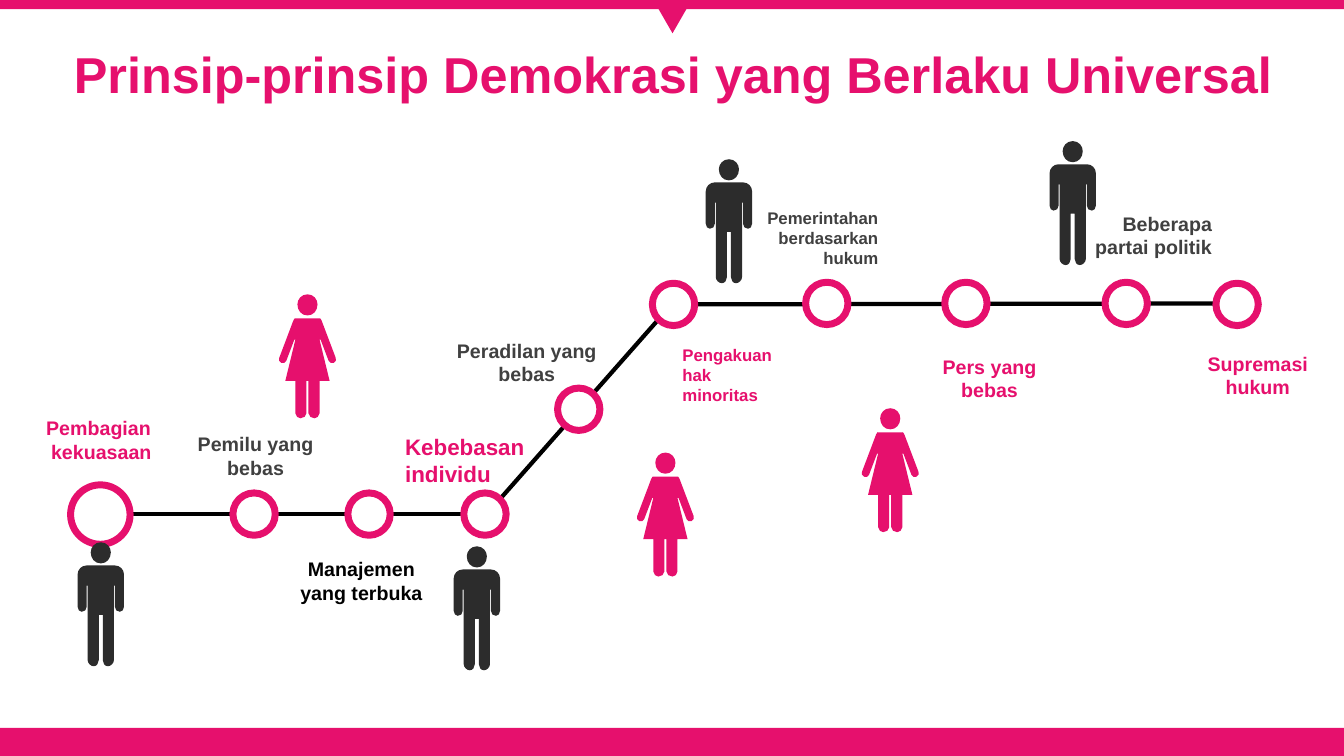
from lxml import etree
from pptx import Presentation
from pptx import util as u
from pptx.dml import color
from pptx.enum import shapes, text
from pptx.oxml import ns

COLORS = {"pink": "E6106D", "white": "FFFFFF", "black": "000000",
          "gray": "404040", "charcoal": "2C2C2C"}
LEFT, CENTER, RIGHT = text.PP_ALIGN.LEFT, text.PP_ALIGN.CENTER, text.PP_ALIGN.RIGHT

deck = Presentation()
deck.slide_width, deck.slide_height = u.Inches(13.33), u.Inches(7.5)
page = deck.slides.add_slide(deck.slide_layouts[6])


def paint(shape, fill, line=None):
    shape.shadow.inherit = False
    shape.fill.solid()
    shape.fill.fore_color.rgb = color.RGBColor.from_string(COLORS[fill])
    if line:
        shape.line.color.rgb = color.RGBColor.from_string(COLORS[line])
        shape.line.width = u.Pt(5)
    else:
        shape.line.fill.background()


def mirror(half):
    steps = half + [[(-x, y) for x, y in half[-1][-1:]]]
    for before, step in reversed(list(zip(half, half[1:]))):
        points = step[-2::-1] + before[-1:]
        steps.append([(-x, y) for x, y in points])
    return steps


RECTANGLE = shapes.MSO_SHAPE.RECTANGLE
TRIANGLE = shapes.MSO_SHAPE.ISOSCELES_TRIANGLE
frame = [
    (RECTANGLE, 0, 7.22, 13.33, 0.28, 0),
    (RECTANGLE, 0, 0, 13.33, 0.09, 0),
    (TRIANGLE, 6.48, 0, 0.38, 0.33, 180),
]
for kind, x, y, width, height, turn in frame:
    shape = page.shapes.add_shape(kind, *map(u.Inches, (x, y, width, height)))
    shape.rotation = turn
    paint(shape, "pink")

tracks = [(1.29, 5.1, 4.6, 5.1), (4.96, 4.95, 6.53, 3.17), (6.67, 3.02, 12.49, 3.01)]
for ends in tracks:
    track = page.shapes.add_connector(shapes.MSO_CONNECTOR.STRAIGHT, *map(u.Inches, ends))
    track.line.color.rgb = color.RGBColor.from_string(COLORS["black"])
    track.line.width = u.Pt(3)
    etree.SubElement(track._element.spPr, ns.qn("a:effectLst"))

stops = [(0.7, 4.81, 0.59)] + [(x, y, 0.42) for x, y in [
    (2.31, 4.89), (3.45, 4.89), (4.6, 4.89), (5.53, 3.85), (6.47, 2.81),
    (7.99, 2.8), (9.37, 2.8), (10.96, 2.8), (12.06, 2.81)]]
for x, y, size in stops:
    stop = page.shapes.add_shape(shapes.MSO_SHAPE.OVAL, *map(u.Inches, (x, y, size, size)))
    paint(stop, "white", "pink")

man = mirror([
    [(0.14, 0.23)], [(0.19, 0.23), (0.23, 0.27), (0.23, 0.32)], [(0.23, 0.64)],
    [(0.23, 0.67), (0.21, 0.69), (0.19, 0.69)], [(0.16, 0.69), (0.14, 0.67), (0.14, 0.64)],
    [(0.14, 0.43)], [(0.13, 0.43)], [(0.13, 1.17)],
    [(0.13, 1.2), (0.1, 1.23), (0.07, 1.23)], [(0.04, 1.23), (0.02, 1.2), (0.02, 1.17)],
    [(0.02, 0.72)]])
woman = mirror([
    [(0.09, 0.24)], [(0.13, 0.24), (0.13, 0.23), (0.14, 0.26)], [(0.28, 0.63)],
    [(0.29, 0.65), (0.28, 0.67), (0.26, 0.68)], [(0.24, 0.69), (0.22, 0.68), (0.21, 0.66)],
    [(0.13, 0.45)], [(0.12, 0.45)], [(0.22, 0.86)], [(0.12, 0.86)], [(0.12, 1.18)],
    [(0.12, 1.21), (0.09, 1.23), (0.07, 1.23)], [(0.04, 1.23), (0.01, 1.21), (0.01, 1.18)],
    [(0.01, 0.86)]])
head = [
    [(0, 0)], [(0.06, 0), (0.1, 0.05), (0.1, 0.1)], [(0.1, 0.16), (0.06, 0.21), (0, 0.21)],
    [(-0.06, 0.21), (-0.1, 0.16), (-0.1, 0.1)], [(-0.1, 0.05), (-0.06, 0), (0, 0)]]
people = [
    (man, "charcoal", [(1.0, 5.38), (4.73, 5.42), (7.23, 1.58), (10.64, 1.4)]),
    (woman, "pink", [(3.05, 2.92), (6.6, 4.49), (8.83, 4.05)]),
]
for body, fill, places in people:
    for middle, top in places:
        torso, face = ([[(u.Inches(middle + x), u.Inches(top + y)) for x, y in step]
                        for step in outline] for outline in (body, head))
        builder = page.shapes.build_freeform(*torso[0][-1])
        builder.add_line_segments([step[-1] for step in torso[1:]], close=True)
        builder.move_to(*face[0][-1])
        builder.add_line_segments([step[-1] for step in face[1:]], close=True)
        person = builder.convert_to_shape()
        segments = list(person._element.iter(ns.qn("a:lnTo")))
        for segment, step in zip(segments, torso[1:] + face[1:]):
            if len(step) == 3:
                curve = etree.Element(ns.qn("a:cubicBezTo"))
                for x, y in step:
                    etree.SubElement(curve, ns.qn("a:pt"),
                                     x=str(x - person.left), y=str(y - person.top))
                segment.getparent().replace(segment, curve)
        paint(person, fill)

labels = [
    ("Prinsip-prinsip Demokrasi yang Berlaku Universal", 0.35, 0.37, 12.66, 0.79, 36, "pink", CENTER),
    ("Pembagian \nkekuasaan", 0.14, 4.08, 1.73, 0.57, 14, "pink", CENTER),
    ("Pemilu yang bebas", 1.74, 4.24, 1.59, 0.57, 14, "gray", CENTER),
    ("Manajemen yang terbuka", 2.72, 5.48, 1.73, 0.57, 14, "black", CENTER),
    ("Kebebasan individu", 3.92, 4.25, 1.57, 0.64, 16, "pink", LEFT),
    ("Peradilan yang bebas", 4.43, 3.31, 1.59, 0.57, 14, "gray", CENTER),
    ("Pengakuan hak minoritas", 6.67, 3.37, 1.13, 0.71, 12, "pink", LEFT),
    ("Pemerintahan berdasarkan hukum", 7.37, 2.01, 1.44, 0.71, 12, "gray", RIGHT),
    ("Pers yang bebas", 8.96, 3.47, 1.71, 0.57, 14, "pink", CENTER),
    ("Beberapa partai politik", 10.68, 2.05, 1.44, 0.57, 14, "gray", RIGHT),
    ("Supremasi hukum", 11.62, 3.44, 1.71, 0.57, 14, "pink", CENTER),
]
for wording, x, y, width, height, size, ink, align in labels:
    box = page.shapes.add_textbox(*map(u.Inches, (x, y, width, height)))
    box.text_frame.word_wrap = True
    box.text_frame.text = wording
    if size == 36:
        box.text_frame.vertical_anchor = text.MSO_ANCHOR.MIDDLE
        box.text_frame.paragraphs[0].line_spacing = 0.9
    else:
        box.text_frame.auto_size = text.MSO_AUTO_SIZE.SHAPE_TO_FIT_TEXT
    for para in box.text_frame.paragraphs:
        para.alignment = align
        para.font.name = "Arial"
        para.font.size = u.Pt(size)
        para.font.bold = True
        para.font.color.rgb = color.RGBColor.from_string(COLORS[ink])

deck.save("out.pptx")
